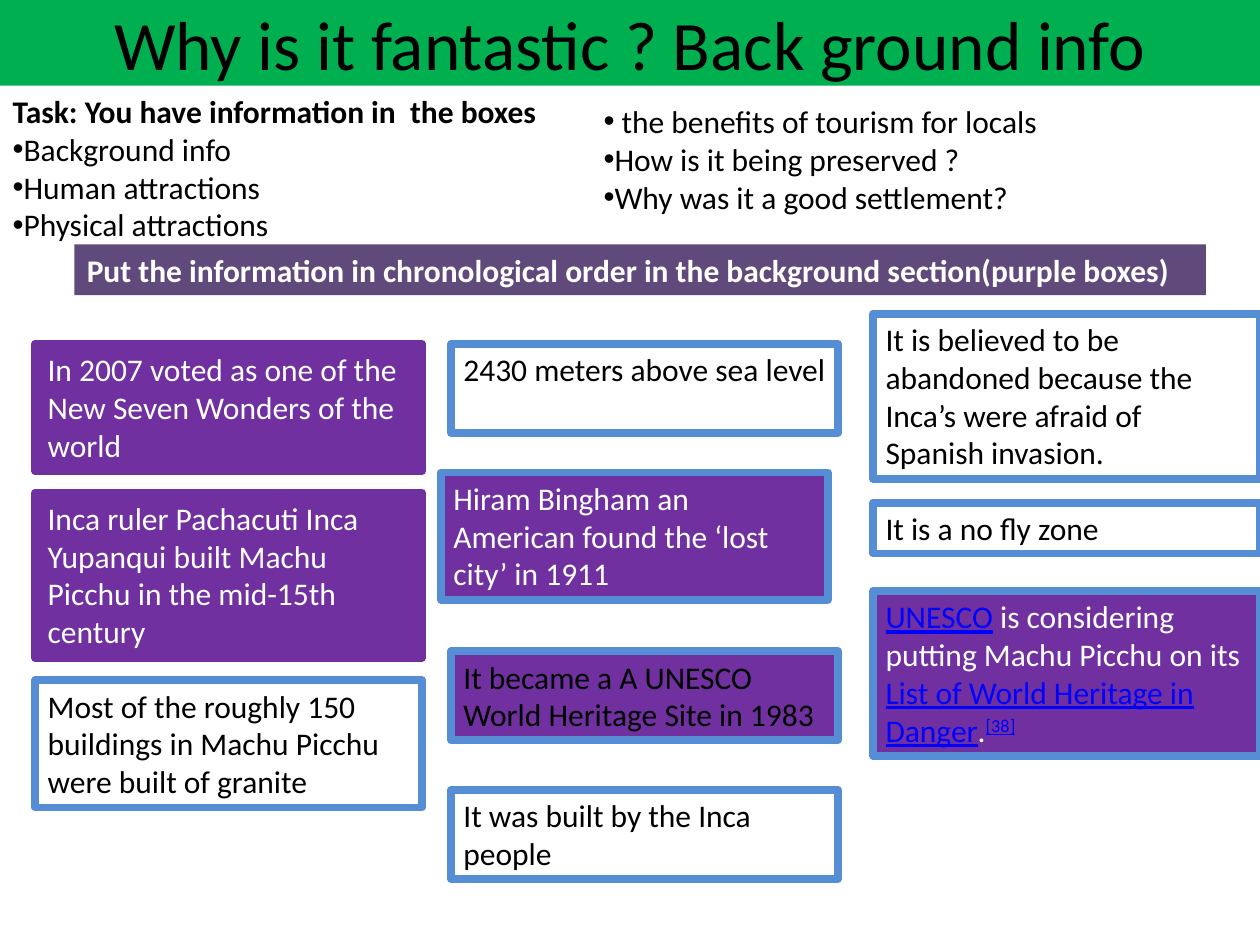
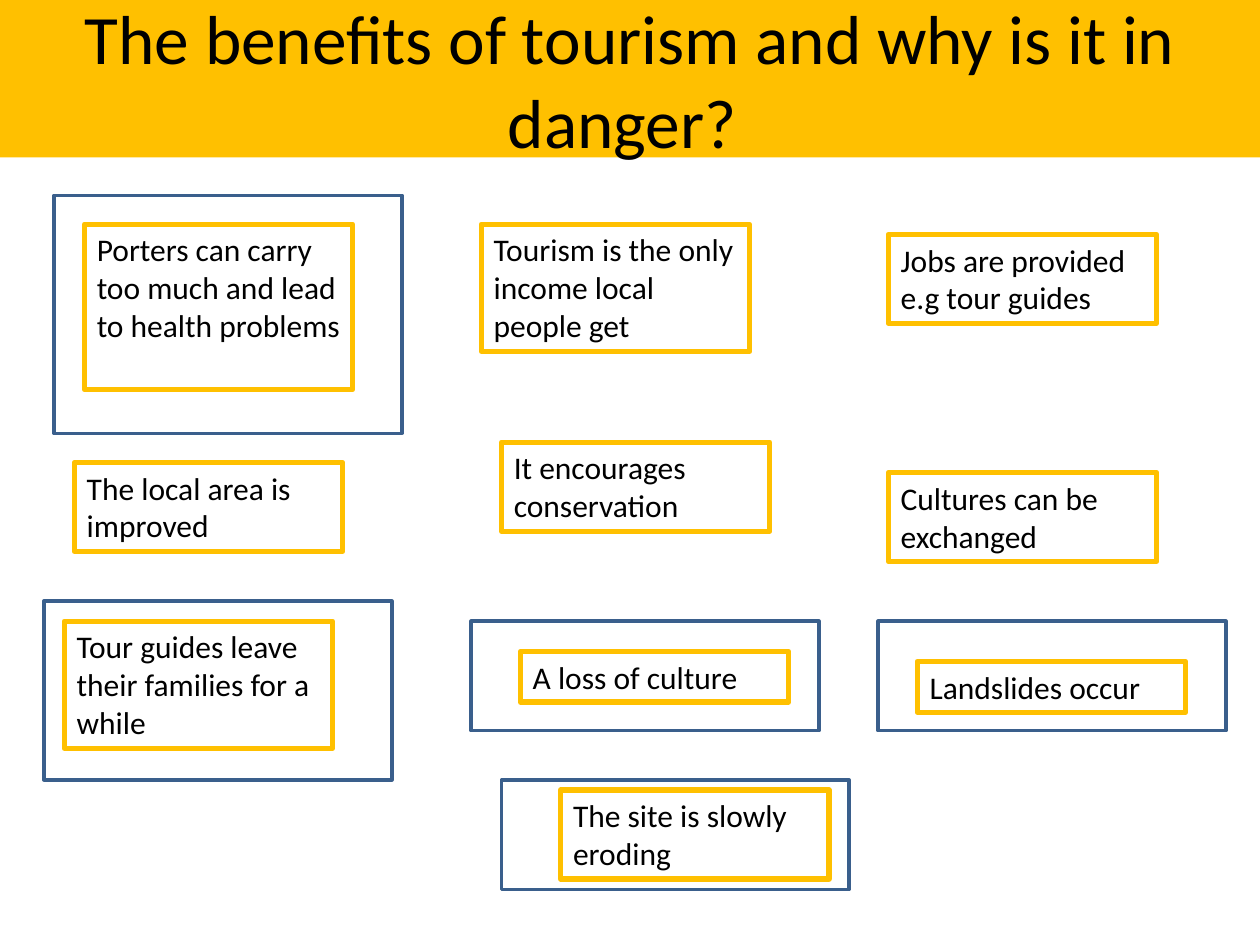
from dataclasses import dataclass

from pptx import Presentation
from pptx.dml.color import RGBColor
from pptx.enum.shapes import MSO_SHAPE
from pptx.enum.text import MSO_ANCHOR, MSO_AUTO_SIZE, PP_ALIGN
from pptx.oxml.ns import qn
from pptx.util import Inches, Pt

RECT = MSO_SHAPE.RECTANGLE
TOP, MIDDLE = MSO_ANCHOR.TOP, MSO_ANCHOR.MIDDLE
LEFT, CENTER = PP_ALIGN.LEFT, PP_ALIGN.CENTER
NO_AUTOFIT = MSO_AUTO_SIZE.NONE
TITLE_ONLY, TWO_CONTENT = 5, 3


@dataclass(frozen=True)
class Theme:
    font: str = "Calibri"
    title_size: float = 39.6
    text_size: float = 18
    black: str = "000000"
    white: str = "FFFFFF"
    link: str = "0000FF"
    green: str = "00B050"
    amber: str = "FFC000"
    purple: str = "7030A0"
    dark_purple: str = "604A7B"
    blue: str = "558ED5"
    navy: str = "3A5F8C"
    card_line: float = 4.5
    note_line: float = 3
    frame_line: float = 2


T = Theme()

# Card styles: fill, line colour, text colour
STYLES = {
    "purple": (T.purple, T.purple, T.white),
    "outlined": (T.purple, T.blue, T.white),
    "dark text": (T.purple, T.blue, T.black),
    "plain": (None, T.blue, T.black),
}
LINK = {"underline": True, "color": T.link}
SUPERSCRIPT = {**LINK, "baseline": "30000"}


# Shared helpers
def place(sp, box):
    for name, value in zip(("left", "top", "width", "height"), box):
        setattr(sp, name, Inches(value))


def paint(sp, fill=None):
    if fill:
        sp.fill.solid()
        sp.fill.fore_color.rgb = RGBColor.from_string(fill)
    else:
        sp.fill.background()


def add_run(p, text, color=T.black, size=T.text_size, baseline=None, **fmt):
    r = p.add_run()
    r.text = text
    for name, value in {"name": T.font, "size": Pt(size), **fmt}.items():
        setattr(r.font, name, value)
    r.font.color.rgb = RGBColor.from_string(color)
    if baseline:
        r._r.get_or_add_rPr().set("baseline", baseline)


def setup_frame(tf, anchor=TOP):
    for name, value in {"word_wrap": True, "auto_size": NO_AUTOFIT,
                        "vertical_anchor": anchor}.items():
        setattr(tf, name, value)


def text_height(lines):
    return 0.1 + 0.303 * lines


def add_box(slide, box, text="", fill=None, line=None, width=0,
            color=T.black, **fmt):
    """Rectangle; text is a string or a list of (text, run format)."""
    sp = slide.shapes.add_shape(RECT, *map(Inches, box))
    sp.shadow.inherit = False
    paint(sp, fill)
    if line:
        sp.line.color.rgb = RGBColor.from_string(line)
        sp.line.width = Pt(width)
    else:
        sp.line.fill.background()
    if text:
        setup_frame(sp.text_frame)
        p = sp.text_frame.paragraphs[0]
        p.alignment = LEFT
        runs = [(text, {})] if isinstance(text, str) else text
        for words, extra in runs:
            add_run(p, words, **{"color": color, **fmt, **extra})


def add_title(slide, text, height, fill):
    sp = slide.shapes.title
    place(sp, (0, 0, 10, height))
    paint(sp, fill)
    setup_frame(sp.text_frame, MIDDLE)
    p = sp.text_frame.paragraphs[0]
    p.alignment = CENTER
    add_run(p, text, size=T.title_size)


def add_list(sp, box, items, heading=None):
    place(sp, box)
    tf = sp.text_frame
    setup_frame(tf)
    rows = ([heading] if heading else []) + items
    for i, text in enumerate(rows):
        p = tf.paragraphs[0] if i == 0 else tf.add_paragraph()
        p.space_before = Pt(0)
        is_heading = text == heading
        add_run(p, text, bold=is_heading)
        pPr = p._p.get_or_add_pPr()
        pPr.set("marL", "0")
        pPr.set("indent", "0")
        bullet = pPr.makeelement(qn("a:buNone" if is_heading else "a:buChar"), {})
        if not is_heading:
            bullet.set("char", "•")
        pPr.append(bullet)


# Slide 1: background information
def add_card_column(slide, left, cards):
    for top, lines, style, text in cards:
        fill, line, color = STYLES[style]
        add_box(slide, (left, top, 3.07, text_height(lines)), text,
                fill, line, T.card_line, color)


def background_slide(prs):
    slide = prs.slides.add_slide(prs.slide_layouts[TWO_CONTENT])
    add_title(slide, "Why is it fantastic ? Back ground info", 0.68, T.green)

    # Task lists
    add_list(slide.placeholders[1], (0, 0.68, 4.45, 1.62),
             ["Background info", "Human attractions", "Physical attractions"],
             heading="Task: You have information in  the boxes")
    add_list(slide.placeholders[2], (4.69, 0.76, 4.45, 1.01),
             [" the benefits of tourism for locals",
              "How is it being preserved ?", "Why was it a good settlement?"])

    # Information cards
    add_card_column(slide, 0.28, [
        (2.73, 3, "purple",
         "In 2007 voted as one of the New Seven Wonders of the world"),
        (3.91, 4, "purple", "Inca ruler Pachacuti Inca Yupanqui built Machu "
                            "Picchu in the mid-15th century"),
        (5.4, 3, "plain", "Most of the roughly 150 buildings in Machu Picchu "
                          "were built of granite"),
    ])
    add_card_column(slide, 3.58, [
        (2.73, 2, "plain", "2430 meters above sea level"),
        (5.17, 2, "dark text",
         "It became a A UNESCO World Heritage Site in 1983"),
        (6.27, 2, "plain", "It was built by the Inca people"),
    ])
    add_card_column(slide, 3.5, [
        (3.75, 3, "outlined",
         "Hiram Bingham an American found the ‘lost city’ in 1911"),
    ])
    add_card_column(slide, 6.93, [
        (2.49, 4, "plain", "It is believed to be abandoned because the Inca’s "
                           "were afraid of Spanish invasion."),
        (3.99, 1, "plain", "It is a no fly zone"),
        (4.69, 4, "outlined", [
            ("UNESCO", LINK),
            (" is considering putting Machu Picchu on its ", {}),
            ("List of World Heritage in Danger", LINK),
            (".", {}),
            ("[38]", SUPERSCRIPT)]),
    ])

    # Instruction band
    add_box(slide, (0.59, 1.94, 8.98, text_height(1)),
            "Put the information in chronological order in the background "
            "section(purple boxes)",
            fill=T.dark_purple, color=T.white, bold=True)


# Slide 2: benefits and dangers
def add_note(slide, left, top, lines, text):
    add_box(slide, (left, top, 2.13, text_height(lines)), text,
            line=T.amber, width=T.note_line)


def add_danger_frame(slide, left, top, height):
    add_box(slide, (left, top, 2.76, height), line=T.navy, width=T.frame_line)


def tourism_slide(prs):
    slide = prs.slides.add_slide(prs.slide_layouts[TITLE_ONLY])
    add_title(slide, "The benefits of tourism and why is it in danger? ",
              1.25, T.amber)

    notes = [
        (0.67, 1.78, 4, "Porters can carry too much and lead to health problems"),
        (0.59, 3.67, 2, "The local area is improved"),
        (3.98, 3.51, 2, "It encourages conservation"),
        (3.82, 1.78, 3, "Tourism is the only income local people get"),
        (7.05, 1.86, 2, "Jobs are provided e.g tour guides"),
        (7.05, 3.75, 2, "Cultures can be exchanged"),
        (0.51, 4.93, 3, "Tour guides leave their families for a while"),
        (4.13, 5.17, 1, "A loss of culture"),
        (7.28, 5.25, 1, "Landslides occur"),
        (4.45, 6.27, 2, "The site is slowly eroding"),
    ]
    for note in notes:
        add_note(slide, *note)

    # Frames around the dangers
    for frame in [(0.43, 1.55, 1.89), (6.97, 4.93, 0.87), (3.74, 4.93, 0.87),
                  (0.35, 4.77, 1.42), (3.98, 6.19, 0.87)]:
        add_danger_frame(slide, *frame)


def main():
    prs = Presentation()
    prs.slide_width, prs.slide_height = Inches(10), Inches(7.5)
    background_slide(prs)
    tourism_slide(prs)
    prs.save("out.pptx")


if __name__ == "__main__":
    main()
